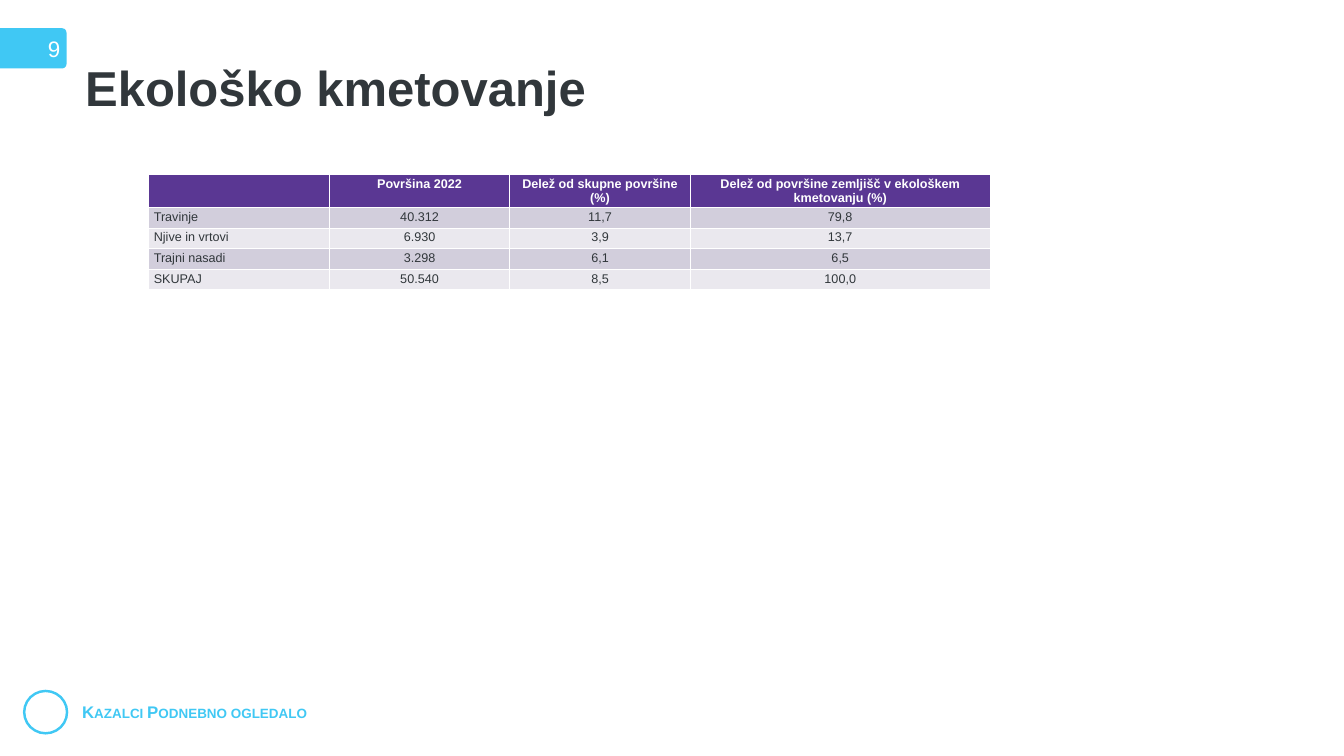
from pptx import Presentation
from pptx import util as u
from pptx.dml.color import RGBColor
from pptx.enum import shapes, text

COLORS = {
    "sky": "40C8F4", "ink": "31373B", "white": "FFFFFF",
    "purple": "5A3793", "band_dark": "D2CEDC", "band_light": "EAE8EE",
}
ROWS = [
    ["", "Površina 2022", "Delež od skupne površine (%)",
     "Delež od površine zemljišč v ekološkem kmetovanju (%)"],
    ["Travinje", "40.312", "11,7", "79,8"],
    ["Njive in vrtovi", "6.930", "3,9", "13,7"],
    ["Trajni nasadi", "3.298", "6,1", "6,5"],
    ["SKUPAJ", "50.540", "8,5", "100,0"],
]


def rgb(name):
    return RGBColor.from_string(COLORS[name])


class Deck:
    """Style and current slide; lengths are percentages of the slide's size."""

    font = "Arial"

    def __init__(self, width, height):
        self.prs = Presentation()
        self.prs.slide_width, self.prs.slide_height = u.Inches(width), u.Inches(height)
        self.s = self.prs.slides.add_slide(self.prs.slide_layouts[5])

    def x(self, share):
        return round(self.prs.slide_width * share / 100)

    def y(self, share):
        return round(self.prs.slide_height * share / 100)

    def box(self, left, top, width, height):
        return self.x(left), self.y(top), self.x(width), self.y(height)

    def set_text(self, tf, words, size, color, bold=False, align=text.PP_ALIGN.LEFT):
        tf.word_wrap = True
        tf.text = words
        p = tf.paragraphs[0]
        p.alignment = align
        p.font.name, p.font.size, p.font.bold = self.font, u.Pt(size), bold
        p.font.color.rgb = rgb(color)
        return p

    def title(self, words, *at):
        sp = self.s.shapes.title
        sp.left, sp.top, sp.width, sp.height = self.box(*at)
        tf = sp.text_frame
        tf.auto_size = text.MSO_AUTO_SIZE.NONE
        tf.vertical_anchor = text.MSO_ANCHOR.TOP
        self.set_text(tf, words, 70, "ink", True).line_spacing = 0.9

    def footer(self, words, *at):
        tf = self.s.shapes.add_textbox(*self.box(*at)).text_frame
        p = self.set_text(tf, words, 24, "sky", True)
        p.font._element.set("cap", "small")

    def ring(self, *at):
        sp = self.s.shapes.add_shape(shapes.MSO_SHAPE.OVAL, *self.box(*at))
        sp.shadow.inherit = False
        sp.fill.background()
        sp.line.color.rgb = rgb("sky")
        sp.line.width = u.Pt(3.5)

    def page_badge(self, number, *at):
        sp = self.s.shapes.add_shape(shapes.MSO_SHAPE.ROUNDED_RECTANGLE, *self.box(*at))
        sp.adjustments[0] = 0.11
        sp.shadow.inherit = False
        sp.fill.solid()
        sp.fill.fore_color.rgb = rgb("sky")
        sp.line.fill.background()
        sp.text_frame.vertical_anchor = text.MSO_ANCHOR.MIDDLE
        self.set_text(sp.text_frame, number, 32, "white", align=text.PP_ALIGN.RIGHT)

    def table(self, rows, left, top, widths, header_height, row_height):
        heights = [header_height] + [row_height] * (len(rows) - 1)
        at = self.box(left, top, sum(widths), sum(heights))
        table = self.s.shapes.add_table(len(rows), len(widths), *at).table
        for column, width in zip(table.columns, widths):
            column.width = self.x(width)
        for i, (row, height) in enumerate(zip(rows, heights)):
            table.rows[i].height = self.y(height)
            fill = "purple" if i == 0 else ("band_light", "band_dark")[i % 2]
            for j, words in enumerate(row):
                cell = table.cell(i, j)
                cell.margin_bottom = 0
                cell.fill.solid()
                cell.fill.fore_color.rgb = rgb(fill)
                align = text.PP_ALIGN.CENTER if j else text.PP_ALIGN.LEFT
                self.set_text(cell.text_frame, words, 18,
                              "ink" if i else "white", i == 0, align)


def main():
    deck = Deck(26.66, 15)
    deck.footer("Kazalci Podnebno ogledalo", 5.74, 92.53, 21.53, 3.33)
    deck.ring(1.8, 91.4, 3.19, 5.6)
    deck.title("Ekološko kmetovanje", 5.96, 8.2, 86.23, 11.93)
    deck.page_badge("9", -1.91, 3.73, 6.86, 5.33)
    deck.table(ROWS, 11.07, 23.07, [13.43] * 3 + [22.32], 4.27, 2.73)
    deck.prs.save("out.pptx")


if __name__ == "__main__":
    main()
